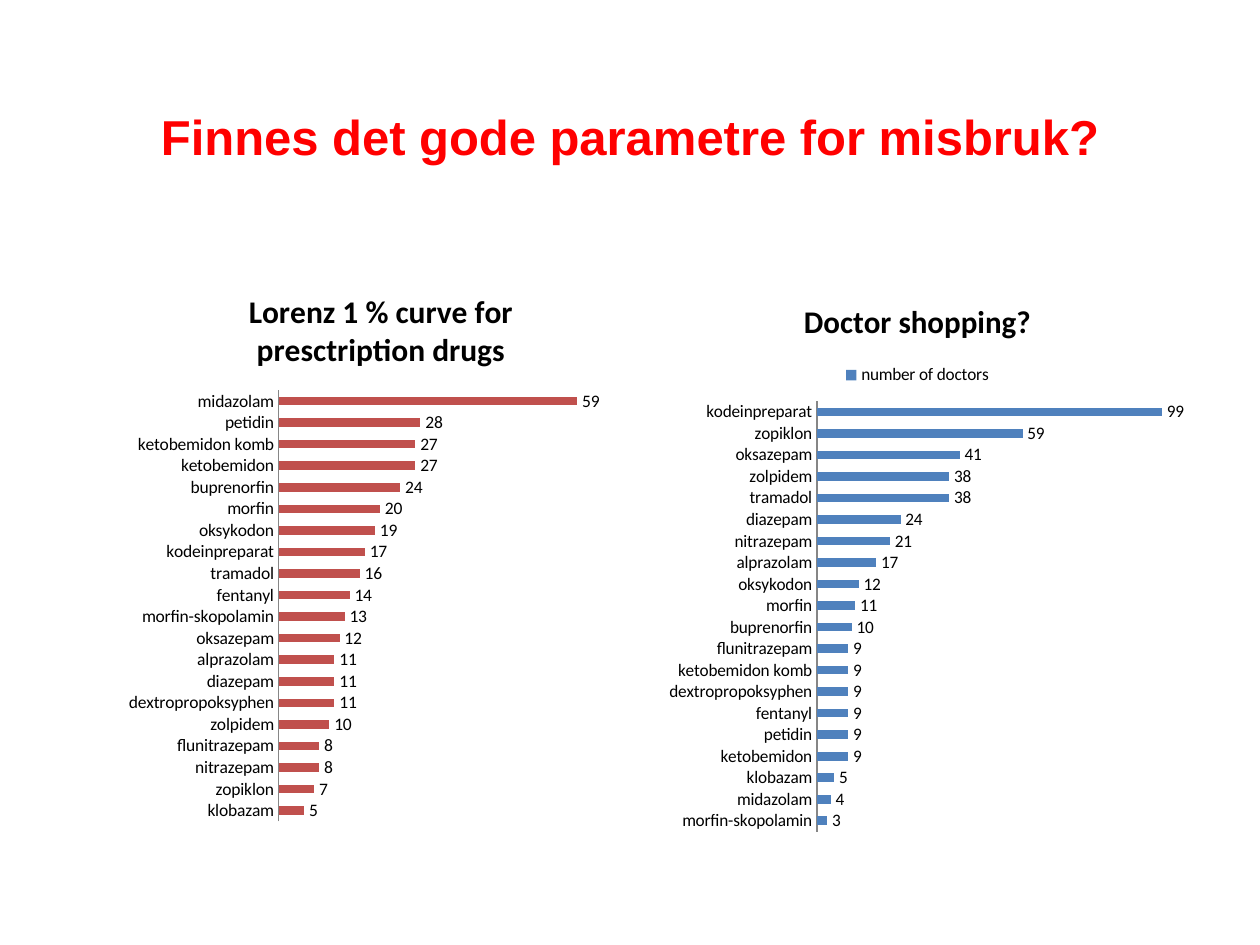
from pptx import Presentation
from pptx import util as u
from pptx.chart.data import CategoryChartData
from pptx.dml.color import RGBColor
from pptx.enum import chart as charts, text

COLOURS = {"heading": "FF0000", "text": "000000", "axis": "868686",
           "doctors": "4F81BD", "lorenz": "C0504D"}

# Drugs from the bottom bar to the top bar
DOCTOR_COUNTS = {
    "morfin-skopolamin": 3, "midazolam": 4, "klobazam": 5, "ketobemidon": 9,
    "petidin": 9, "fentanyl": 9, "dextropropoksyphen": 9,
    "ketobemidon komb": 9, "flunitrazepam": 9, "buprenorfin": 10,
    "morfin": 11, "oksykodon": 12, "alprazolam": 17, "nitrazepam": 21,
    "diazepam": 24, "tramadol": 38, "zolpidem": 38, "oksazepam": 41,
    "zopiklon": 59, "kodeinpreparat": 99,
}
LORENZ_SHARES = {
    "klobazam": 5, "zopiklon": 7, "nitrazepam": 8, "flunitrazepam": 8,
    "zolpidem": 10, "dextropropoksyphen": 11, "diazepam": 11,
    "alprazolam": 11, "oksazepam": 12, "morfin-skopolamin": 13,
    "fentanyl": 14, "tramadol": 16, "kodeinpreparat": 17, "oksykodon": 19,
    "morfin": 20, "buprenorfin": 24, "ketobemidon": 27,
    "ketobemidon komb": 27, "petidin": 28, "midazolam": 59,
}


def colour(name):
    return RGBColor.from_string(COLOURS[name])


def style_font(font, *, size, name="Calibri", ink="text", bold=False):
    font.size = u.Pt(size)
    font.name = name
    font.bold = bold
    font.color.rgb = colour(ink)


def write_text(frame, wording, *, align=text.PP_ALIGN.CENTER, **font_format):
    frame.text = wording
    paragraph = frame.paragraphs[0]
    paragraph.alignment = align
    style_font(paragraph.runs[0].font, **font_format)


def add_heading(slide, wording):
    heading = slide.shapes.title
    heading.left, heading.top = u.Pt(36), u.Pt(32.4)
    heading.width, heading.height = u.Pt(648), u.Pt(90)
    heading.text_frame.vertical_anchor = text.MSO_ANCHOR.MIDDLE
    write_text(heading.text_frame, wording, size=28, name="Arial",
               ink="heading", bold=True)


def add_drug_chart(slide, title, series_name, values, *, left, top, fill,
                   maximum, legend=False):
    data = CategoryChartData()
    data.categories = list(values)
    data.add_series(series_name, list(values.values()))
    chart = slide.shapes.add_chart(
        charts.XL_CHART_TYPE.BAR_CLUSTERED, u.Pt(left), u.Pt(top),
        u.Pt(300), u.Pt(324), data).chart
    style_font(chart.font, size=10)

    # Title and legend
    chart.has_title = True
    write_text(chart.chart_title.text_frame, title, size=18, bold=True)
    chart.chart_title.include_in_layout = False
    chart.has_legend = legend
    if legend:
        chart.legend.position = charts.XL_LEGEND_POSITION.TOP
        chart.legend.include_in_layout = False

    # Axes
    drugs = chart.category_axis
    drugs.major_tick_mark = charts.XL_TICK_MARK.NONE
    drugs.minor_tick_mark = charts.XL_TICK_MARK.NONE
    drugs.format.line.color.rgb = colour("axis")
    counts = chart.value_axis
    counts.visible = False
    counts.has_major_gridlines = False
    counts.minimum_scale = 0
    counts.maximum_scale = maximum

    # Bars and their values
    plot = chart.plots[0]
    plot.vary_by_categories = False
    plot.gap_width = 150
    plot.overlap = -25
    bars = plot.series[0]
    bars.format.fill.solid()
    bars.format.fill.fore_color.rgb = colour(fill)
    labels = bars.data_labels
    labels.show_value = True
    labels.position = charts.XL_LABEL_POSITION.OUTSIDE_END


def main():
    deck = Presentation()
    deck.slide_width, deck.slide_height = u.Pt(720), u.Pt(540)
    slide = deck.slides.add_slide(deck.slide_layouts[5])
    add_heading(slide, "Finnes det gode parametre for misbruk?")
    add_drug_chart(slide, "Doctor shopping?", "number of doctors",
                   DOCTOR_COUNTS, left=376.6, top=157.7, fill="doctors",
                   maximum=100, legend=True)
    add_drug_chart(slide, "Lorenz 1 % curve for presctription drugs",
                   "Series 1", LORENZ_SHARES, left=67.7, top=151.9,
                   fill="lorenz", maximum=70)
    deck.save("out.pptx")


if __name__ == "__main__":
    main()
